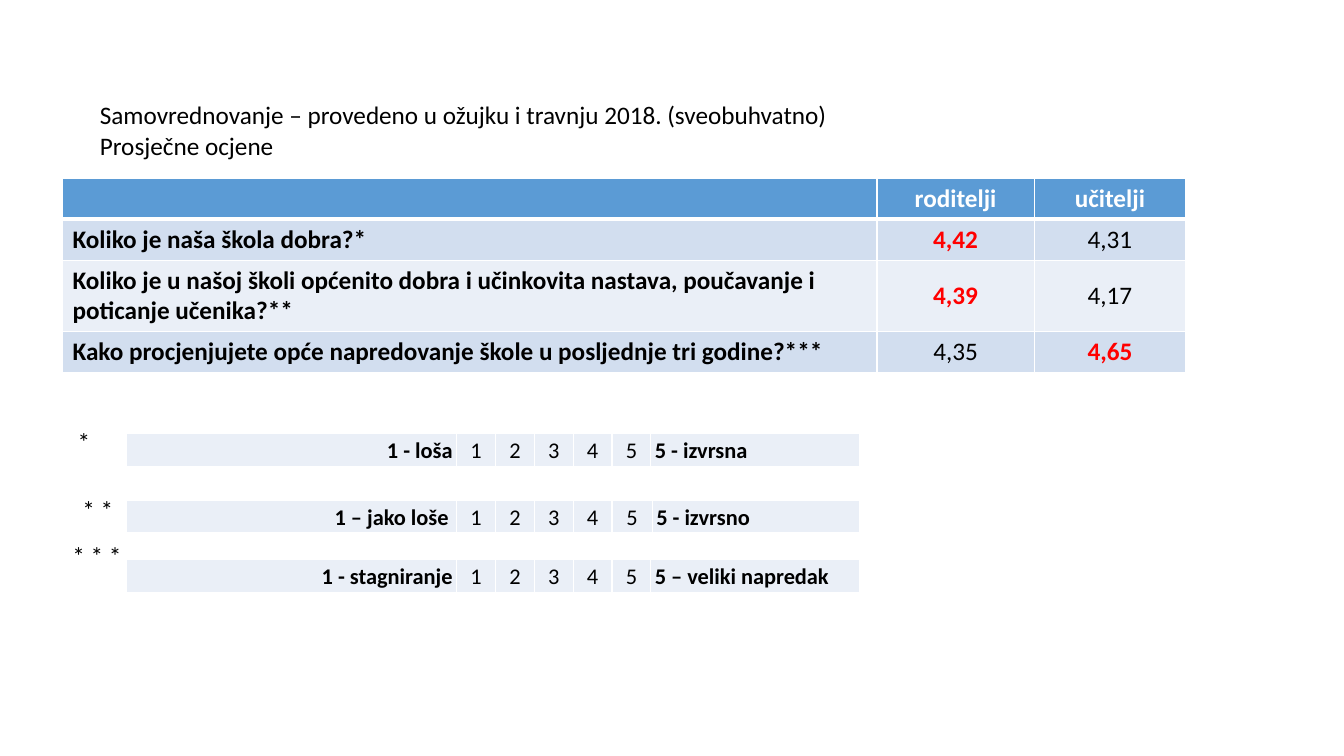
import pptx
import pptx.util
from lxml import etree
from pptx.dml.color import RGBColor
from pptx.enum.text import MSO_ANCHOR, PP_ALIGN
from pptx.oxml.ns import qn

WIDE, HIGH = pptx.util.Inches(13.33), pptx.util.Inches(7.5)
FONT = "Calibri"
BLACK = RGBColor(0x00, 0x00, 0x00)
WHITE = RGBColor(0xFF, 0xFF, 0xFF)
RED = RGBColor(0xFF, 0x00, 0x00)
BLUE = RGBColor(0x5B, 0x9B, 0xD5)
MID = RGBColor(0xD2, 0xDE, 0xEF)
PALE = RGBColor(0xEA, 0xEF, 0xF7)

HEADS = ["", "roditelji", "učitelji"]
GRADES = [
    ["Koliko je naša škola dobra?*", "4,42", "4,31"],
    ["Koliko je u našoj školi općenito dobra i učinkovita nastava, "
     "poučavanje i poticanje učenika?**", "4,39", "4,17"],
    ["Kako procjenjujete opće napredovanje škole u posljednje tri godine?***",
     "4,35", "4,65"],
]
# mark, its left and top, scale top, low end, high end, width of the 5, right inset
SCALES = [
    ("*", 5.03, 55.73, 57.33, "1 - loša", "5 - izvrsna", 2.89, 0.04),
    ("* *", 5.4, 64.67, 66.13, "1 – jako loše", "5 - izvrsno", 3, 0.08),
    ("* * *", 4.65, 70.8, 74, "1 - stagniranje", "5 – veliki napredak", 2.89, 0.04),
]


def across(share):
    """Length for a percentage of the slide's width."""
    return int(WIDE * share / 100)


def down(share):
    """Length for a percentage of the slide's height."""
    return int(HIGH * share / 100)


def style(par, size, bold=False, color=BLACK, align=PP_ALIGN.LEFT):
    par.alignment = align
    font = par.font
    font.name, font.size, font.bold = FONT, pptx.util.Pt(size), bold
    font.color.rgb = color


def rule(cell, base=1):
    """Draw white borders, the lower one base points wide."""
    props = cell._tc.get_or_add_tcPr()
    for side, width in zip("LRTB", (1, 1, 1, base)):
        line = etree.SubElement(props, qn("a:ln" + side), w=str(pptx.util.Pt(width)))
        fill = etree.SubElement(line, qn("a:solidFill"))
        etree.SubElement(fill, qn("a:srgbClr"), val=str(WHITE))


def paint(cell, color, base=1):
    rule(cell, base)
    cell.fill.solid()
    cell.fill.fore_color.rgb = color


def add_grid(slide, left, top, cols, rows):
    """Add a bare table with column and row sizes given as slide shares."""
    frame = slide.shapes.add_table(
        len(rows), len(cols), across(left), down(top),
        across(sum(cols)), down(sum(rows)))
    table = frame.table
    for col, share in zip(table.columns, cols):
        col.width = across(share)
    for row, share in zip(table.rows, rows):
        row.height = down(share)
    return table


def add_head(slide):
    title = slide.shapes.title
    title.left, title.top = across(6.68), down(12.53)
    title.width, title.height = across(69.6), down(9.47)
    frame = title.text_frame
    frame.vertical_anchor = MSO_ANCHOR.TOP
    frame.text = ("Samovrednovanje – provedeno u ožujku i travnju 2018. "
                  "(sveobuhvatno)\nProsječne ocjene")
    for par in frame.paragraphs:
        par.line_spacing = 1.0
        style(par, 18)


def add_grades(slide):
    table = add_grid(slide, 4.65, 23.6, [60.6, 11.7, 11.28], [5.4, 5.4, 9.47, 5.4])
    for r, row in enumerate([HEADS] + GRADES):
        best = max(row[1:])
        for c, text in enumerate(row):
            cell = table.cell(r, c)
            cell.text = text
            if c or r == 0:
                cell.vertical_anchor = MSO_ANCHOR.MIDDLE
            top = r > 0 and text == best
            color = WHITE if r == 0 else RED if top else BLACK
            style(cell.text_frame.paragraphs[0], 18, r == 0 or c == 0 or top,
                  color, PP_ALIGN.CENTER if c else PP_ALIGN.LEFT)
            if r == 0:
                paint(cell, BLUE, 3)
            else:
                paint(cell, MID if r % 2 else PALE)


def add_mark(slide, text, left, top):
    box = slide.shapes.add_textbox(across(left), down(top), across(85.5), down(5.33))
    box.text_frame.word_wrap = True
    box.text_frame.text = text
    style(box.text_frame.paragraphs[0], 18)


def add_scale(slide, top, low, high, five, inset):
    cols = [24.6] + [2.89] * 4 + [five, 18.46 - five]
    table = add_grid(slide, 9.38, top, cols, [4.27])
    texts = [low, "1", "2", "3", "4", "5", high]
    aligns = [PP_ALIGN.RIGHT] + [PP_ALIGN.CENTER] * 5 + [PP_ALIGN.LEFT]
    for c, (text, align) in enumerate(zip(texts, aligns)):
        cell = table.cell(0, c)
        cell.text = text
        cell.margin_left = pptx.util.Inches(0.04)
        cell.margin_right = pptx.util.Inches(0.04 if c else inset)
        cell.margin_top = cell.margin_bottom = pptx.util.Inches(0.02)
        par = cell.text_frame.paragraphs[0]
        par.line_spacing = 1.07
        par.space_before = par.space_after = pptx.util.Pt(3)
        style(par, 16, text in (low, high), BLACK, align)
        paint(cell, PALE)


def main():
    deck = pptx.Presentation()
    deck.slide_width, deck.slide_height = WIDE, HIGH
    slide = deck.slides.add_slide(deck.slide_layouts[5])
    add_head(slide)
    add_grades(slide)
    for mark, left, top, row, *scale in SCALES:
        add_mark(slide, mark, left, top)
        add_scale(slide, row, *scale)
    deck.save("out.pptx")


if __name__ == "__main__":
    main()
